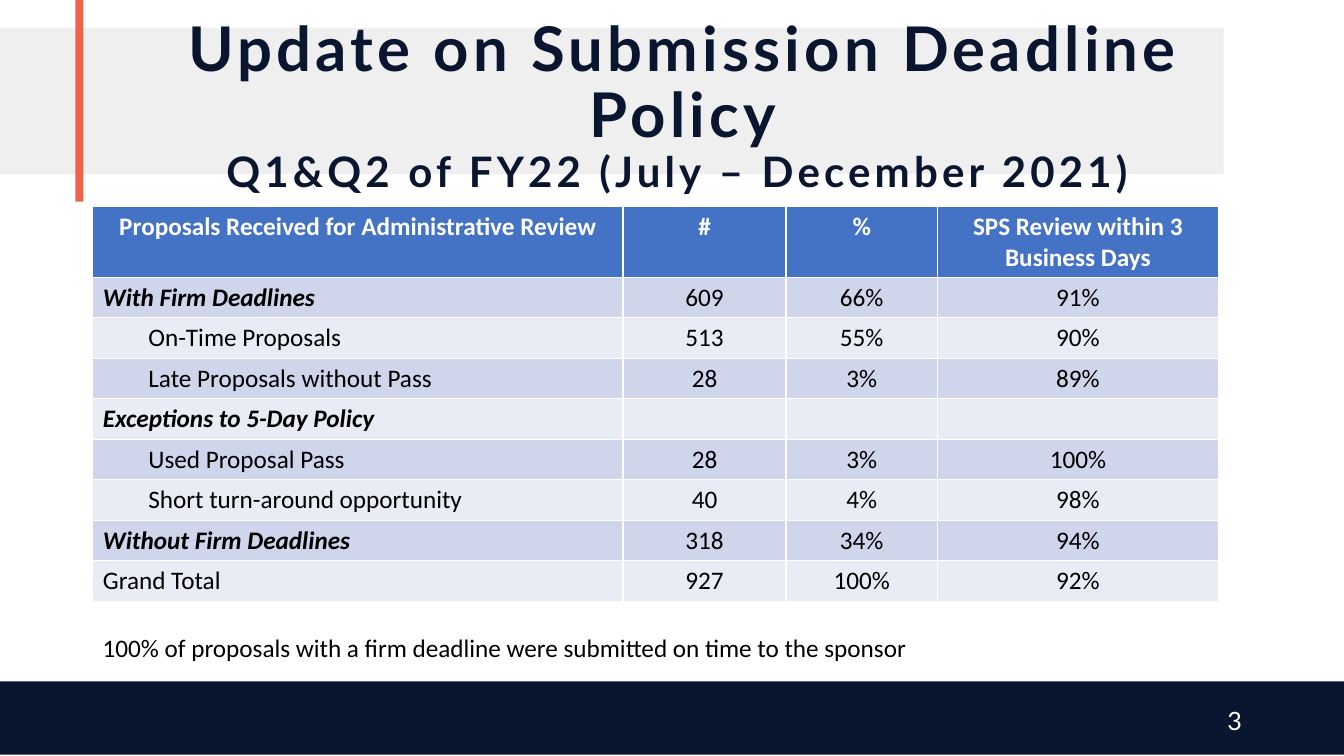
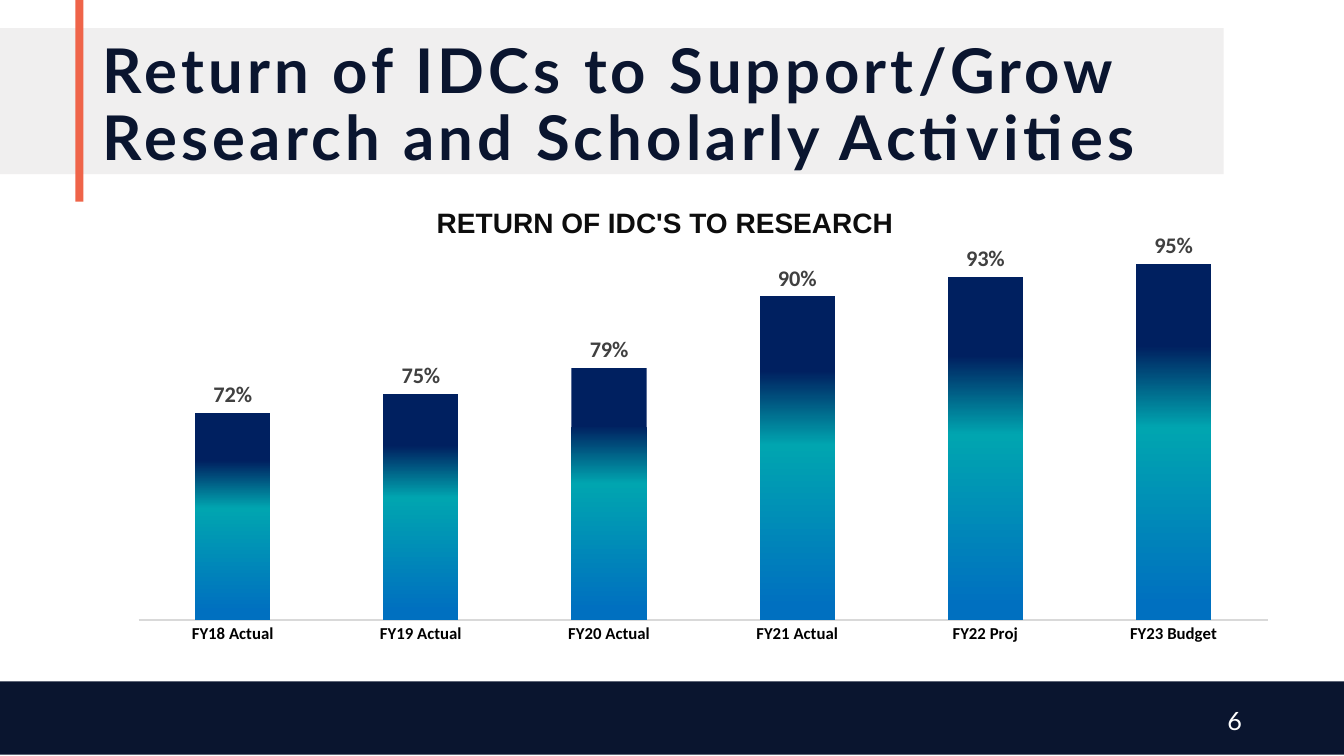
import copy

import pptx
import pptx.chart.data
import pptx.dml.color
import pptx.enum.chart
import pptx.enum.shapes
import pptx.enum.text
import pptx.oxml
import pptx.oxml.ns
import pptx.util

Cm = pptx.util.Cm
Pt = pptx.util.Pt
qn = pptx.oxml.ns.qn
color = pptx.dml.color.RGBColor.from_string
ALIGN = pptx.enum.text.PP_ALIGN
MIDDLE = pptx.enum.text.MSO_ANCHOR.MIDDLE
TOP = pptx.enum.text.MSO_ANCHOR.TOP

NAVY, GREY, CORAL, WHITE, BLACK = "0A152F", "F0EFEF", "EF6449", "FFFFFF", "000000"
HEADER_BLUE, ROW_FILLS = "4472C4", ("CFD5EA", "E9EBF5")
BANDS = [
    (0, 0.71, 30.84, 3.68, GREY),
    (0, 17.17, 33.87, 1.85, NAVY),
    (1.9, 0, 0.2, 5.08, CORAL),
]


def add_run(paragraph, text, size, font, fill, bold=False, italic=False):
    run = paragraph.add_run()
    run.text = text
    run.font.size = Pt(size)
    run.font.name = font
    run.font.color.rgb = color(fill)
    run.font.bold = bold
    run.font.italic = italic
    return run


def add_box(slide, left, top, width, height, align, anchor=TOP):
    box = slide.shapes.add_textbox(Cm(left), Cm(top), Cm(width), Cm(height))
    box.text_frame.word_wrap = True
    box.text_frame.vertical_anchor = anchor
    paragraph = box.text_frame.paragraphs[0]
    paragraph.alignment = align
    return paragraph


presentation = pptx.Presentation()
presentation.slide_width = Cm(33.87)
presentation.slide_height = Cm(19.05)

pages = [
    ("3", 29.85, ALIGN.CENTER, [
        ("Update on Submission Deadline Policy", 44),
        ("Q1&Q2 of FY22 (July – December 2021) ", 30),
    ]),
    ("6", 28.22, ALIGN.LEFT, [
        ("Return of IDCs to Support/Grow Research and Scholarly Activities", 44),
    ]),
]
slides = []
for number, title_width, title_align, title_lines in pages:
    slide = presentation.slides.add_slide(presentation.slide_layouts[6])
    slides.append(slide)
    for left, top, width, height, fill in BANDS:
        band = slide.shapes.add_shape(
            pptx.enum.shapes.MSO_SHAPE.RECTANGLE, Cm(left), Cm(top), Cm(width), Cm(height))
        band.shadow.inherit = False
        band.fill.solid()
        band.fill.fore_color.rgb = color(fill)
        band.line.fill.background()
    title = add_box(slide, 2.34, 0.86, title_width, 3.68, title_align, MIDDLE)
    title.line_spacing = 0.9
    for index, (text, size) in enumerate(title_lines):
        if index:
            title.add_line_break()
        run = add_run(title, text, size, "Lato", NAVY, bold=True)
        run.font._element.set("spc", "300")
    page_number = add_box(slide, 23.93, 17.65, 7.62, 1.02, ALIGN.RIGHT, MIDDLE)
    add_run(page_number, number, 18, "Lato", WHITE)

deadline_slide, return_slide = slides

GROUP, DETAIL, TOTAL = "group", "detail", "total"
headings = ("Proposals Received for Administrative Review", "#", "%",
            "SPS Review within 3 Business Days")
proposals = [
    (GROUP, "With Firm Deadlines", "609", "66%", "91%"),
    (DETAIL, "On-Time Proposals", "513", "55%", "90%"),
    (DETAIL, "Late Proposals without Pass", "28", "3%", "89%"),
    (GROUP, "Exceptions to 5-Day Policy", "", "", ""),
    (DETAIL, "Used Proposal Pass", "28", "3%", "100%"),
    (DETAIL, "Short turn-around opportunity", "40", "4%", "98%"),
    (GROUP, "Without Firm Deadlines", "318", "34%", "94%"),
    (TOTAL, "Grand Total", "927", "100%", "92%"),
]
column_widths = (13.36, 4.11, 3.81, 7.09)
row_heights = [1.78] + [1.02] * len(proposals)
table = deadline_slide.shapes.add_table(
    len(row_heights), len(column_widths), Cm(2.34), Cm(5.21),
    Cm(sum(column_widths)), Cm(sum(row_heights))).table
for column, width in zip(table.columns, column_widths):
    column.width = Cm(width)
for row, height in zip(table.rows, row_heights):
    row.height = Cm(height)

for row_index, (level, *texts) in enumerate([("header", *headings), *proposals]):
    is_header = row_index == 0
    for column_index, text in enumerate(texts):
        cell = table.cell(row_index, column_index)
        cell.fill.solid()
        cell.fill.fore_color.rgb = color(
            HEADER_BLUE if is_header else ROW_FILLS[(row_index - 1) % 2])
        is_label = column_index == 0 and not is_header
        if is_label and level == DETAIL:
            cell.margin_left = Cm(1.4)
        paragraph = cell.text_frame.paragraphs[0]
        paragraph.alignment = ALIGN.LEFT if is_label else ALIGN.CENTER
        if text:
            is_group = is_label and level == GROUP
            add_run(paragraph, text, 18, "Calibri", WHITE if is_header else BLACK,
                    bold=is_header or is_group, italic=is_group)

sponsor_note = add_box(deadline_slide, 2.34, 15.82, 25.96, 1.02, ALIGN.LEFT)
add_run(sponsor_note,
        "100% of proposals with a firm deadline were submitted on time to the sponsor",
        18, "Calibri", BLACK)

chart_title = add_box(return_slide, 10.6, 5.05, 12.32, 1.12, ALIGN.CENTER)
add_run(chart_title, "RETURN OF IDC'S TO RESEARCH", 20, "Arial", "0D0D0D", bold=True)

chart_data = pptx.chart.data.CategoryChartData(number_format="0%")
chart_data.categories = ["FY18 Actual", "FY19 Actual", "FY20 Actual",
                         "FY21 Actual", "FY22 Proj", "FY23 Budget"]
chart_data.add_series("Series 1", (0.72, 0.75, 0.79, 0.9, 0.93, 0.95))
chart = return_slide.shapes.add_chart(
    pptx.enum.chart.XL_CHART_TYPE.COLUMN_CLUSTERED,
    Cm(2.9), Cm(5.87), Cm(29.64), Cm(10.49), chart_data).chart
chart.has_title = False
chart.has_legend = False
chart.font.name = "Calibri"
chart.font.size = Pt(10)
chart.font.color.rgb = color(BLACK)

category_axis = chart.category_axis
category_axis.major_tick_mark = pptx.enum.chart.XL_TICK_MARK.NONE
category_axis.format.line.color.rgb = color("D9D9D9")
category_axis.format.line.width = Pt(1)
category_axis.tick_labels.font.name = "Calibri"
category_axis.tick_labels.font.size = Pt(12)
category_axis.tick_labels.font.bold = True
category_axis.tick_labels.font.color.rgb = color(BLACK)

value_axis = chart.value_axis
value_axis.minimum_scale = 0.4
value_axis.maximum_scale = 0.95
value_axis.has_major_gridlines = False
value_axis.visible = False

plot = chart.plots[0]
plot.gap_width = 150
plot.vary_by_categories = False
plot.has_data_labels = True
labels = plot.data_labels
labels.show_value = True
labels.number_format = "0%"
labels.number_format_is_linked = False
labels.position = pptx.enum.chart.XL_LABEL_POSITION.OUTSIDE_END
labels.font.name = "Calibri"
labels.font.size = Pt(16)
labels.font.bold = True
labels.font.color.rgb = color("404040")

series = plot.series[0]
bar_fill = series.format.fill
bar_fill.gradient()
bar_fill.gradient_angle = 270
stop_list = next(series._element.iter(qn("a:gsLst")))
stop_list.append(copy.deepcopy(stop_list[0]))
bar_stops = ((0.23, "002060"), (0.46, "00A5B0"), (0.96, "0070C0"))
for stop, (position, fill) in zip(bar_fill.gradient_stops, bar_stops):
    stop.position = position
    stop.color.rgb = color(fill)

plot_area = next(chart._chartSpace.iter(qn("c:plotArea")))
for layout in plot_area.findall(qn("c:layout")):
    plot_area.remove(layout)
plot_area.insert(0, pptx.oxml.parse_xml(
    '<c:layout xmlns:c="http://schemas.openxmlformats.org/drawingml/2006/chart">'
    '<c:manualLayout><c:layoutTarget val="inner"/>'
    '<c:xMode val="edge"/><c:yMode val="edge"/>'
    '<c:x val="0.02"/><c:y val="0.07"/><c:w val="0.96"/><c:h val="0.86"/>'
    '</c:manualLayout></c:layout>'))

presentation.save("out.pptx")
